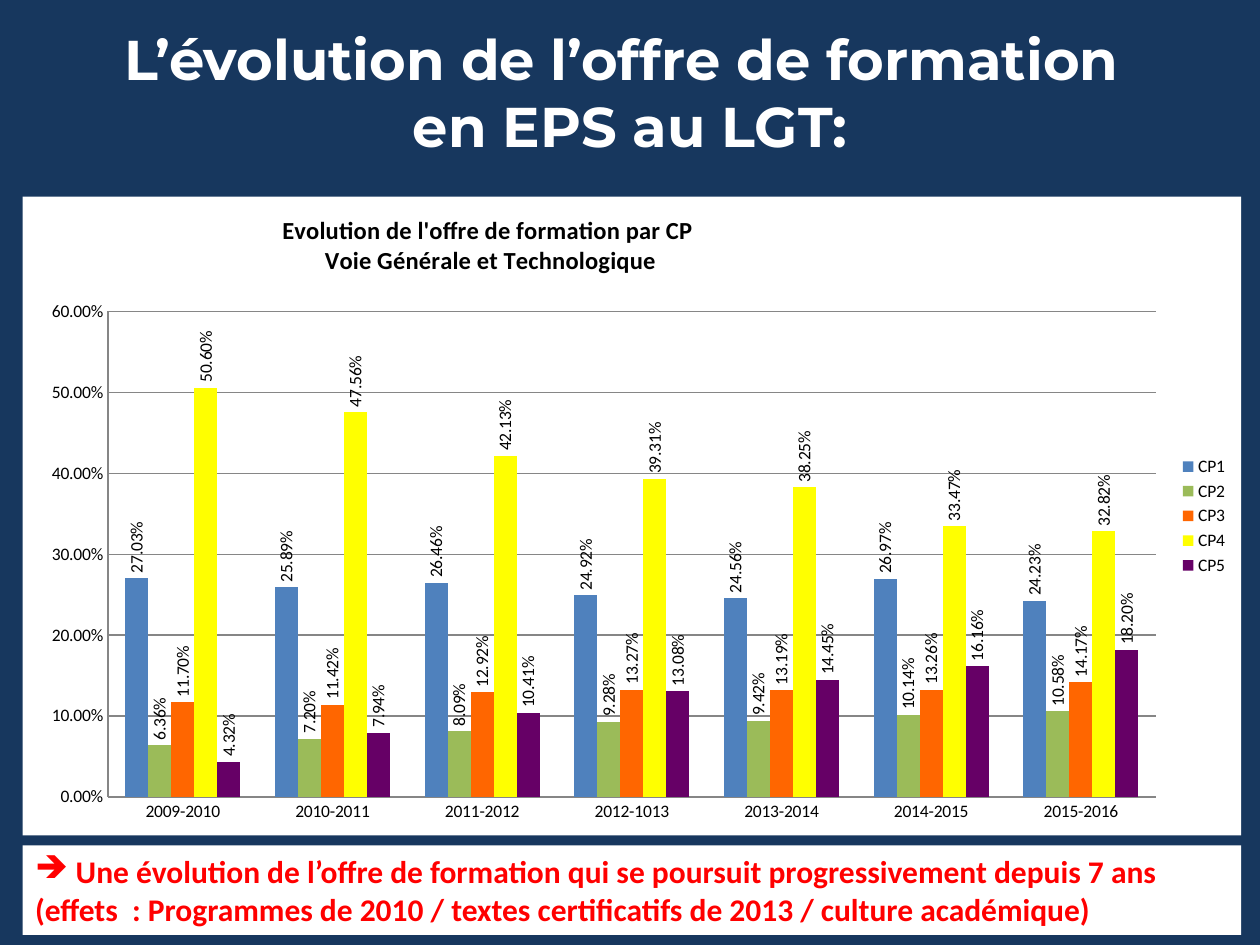
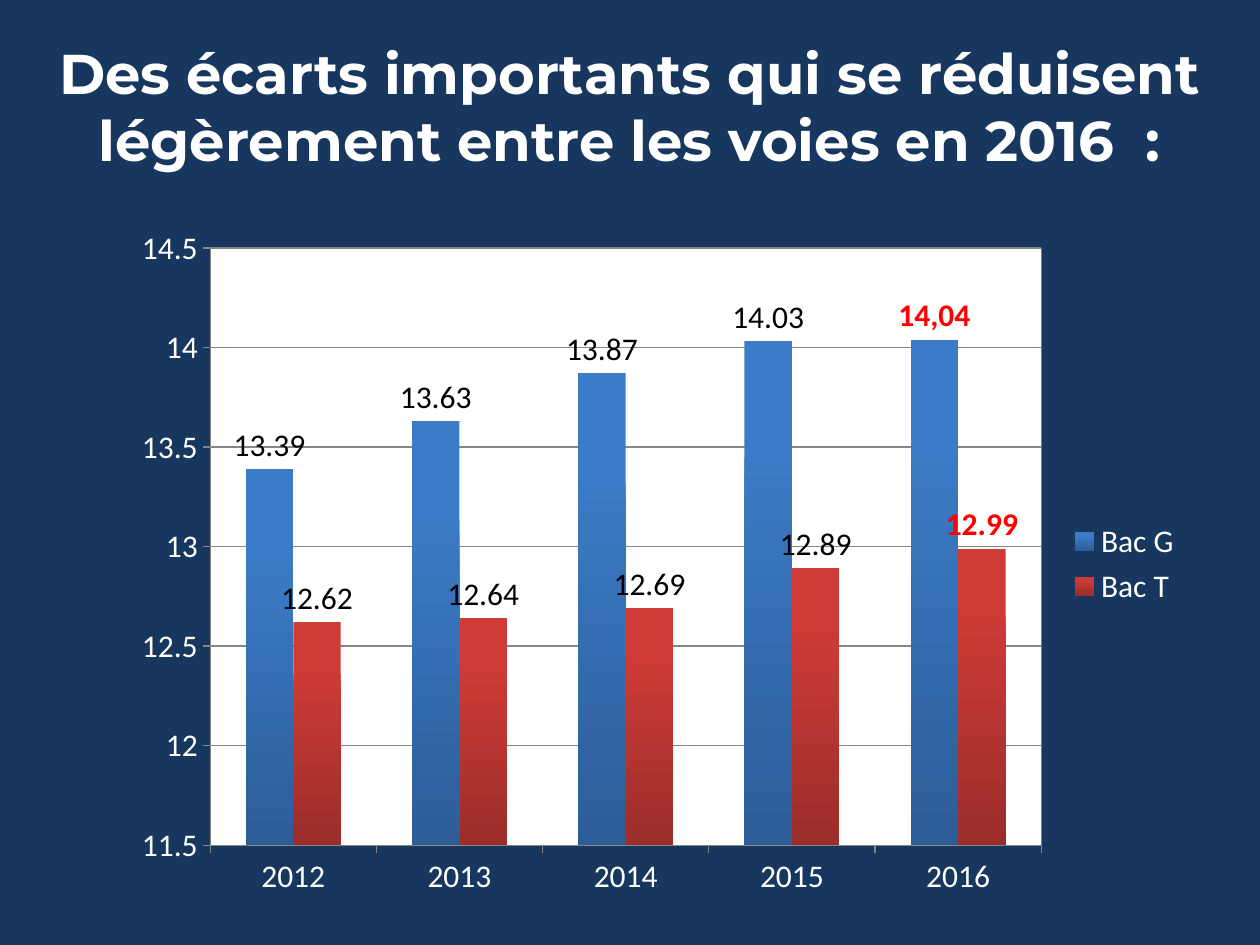
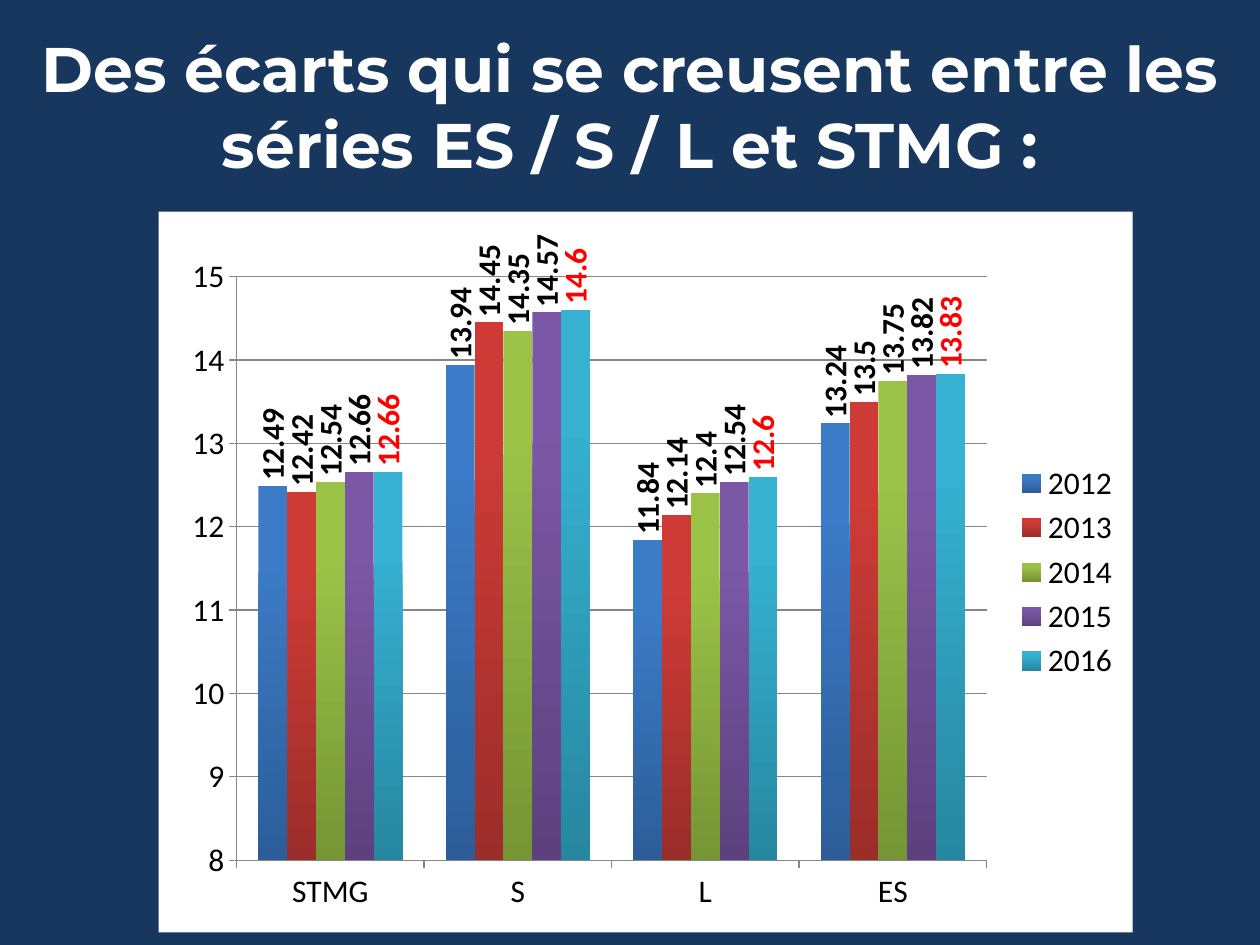
from dataclasses import dataclass
from lxml.etree import SubElement
from pptx import Presentation
from pptx.chart.data import CategoryChartData as Data
from pptx.dml.color import RGBColor as RGB
from pptx.enum.chart import XL_CHART_TYPE as Kind, XL_LABEL_POSITION as Spot
from pptx.enum.chart import XL_LEGEND_POSITION as Side, XL_TICK_MARK as Tick
from pptx.enum.shapes import MSO_SHAPE as Shape
from pptx.enum.text import MSO_ANCHOR as Anchor, PP_ALIGN as Align
from pptx.oxml import parse_xml
from pptx.oxml.ns import nsdecls, qn
from pptx.util import Inches, Pt

COLS, ROWS = 100, 75


@dataclass(frozen=True)
class Theme:
    navy: str = "17375E"
    white: str = "FFFFFF"
    black: str = "000000"
    red: str = "FF0000"
    grid: str = "868686"
    head: str = "Montserrat"
    body: str = "Calibri"
    title: int = 32
    big: int = 36
    text: int = 18
    sub: int = 14
    small: int = 10
    flat: tuple = ("4F81BD", "9BBB59", "FF6600", "FFFF00", "660066")
    fades: tuple = (("3C7BC7", "2C5D98"), ("CE3B37", "9B2D2A"), ("9BC348", "769535"),
                    ("7B58A6", "5D417E"), ("36B1D2", "2787A0"))


def style(font, size, color, bold=False, face=Theme.body):
    font.size, font.bold, font.name = Pt(size), bold, face
    font.color.rgb = RGB.from_string(color)


def write(frame, text, align=None, **look):
    """Fill a text frame: \\n starts a paragraph, \\v a new line."""
    for i, line in enumerate(text.split("\n")):
        para = frame.add_paragraph() if i else frame.paragraphs[0]
        para.text = line
        para.alignment = align
        for run in para.runs:
            style(run.font, **look)


def paint(fill, color):
    """Use one colour for a plain fill, or a pair for a fade from top to foot."""
    if isinstance(color, str):
        fill.solid()
        fill.fore_color.rgb = RGB.from_string(color)
        return
    fill.gradient()
    fill.gradient_angle = 270
    for stop, tone, pos in zip(fill.gradient_stops, color, (0.2, 1)):
        stop.color.rgb = RGB.from_string(tone)
        stop.position = pos


def place(node, index, x, y, size=None):
    """Set the share of the chart where a title or the inner plot stands."""
    for old in node.findall(qn("c:layout")):
        node.remove(old)
    box = parse_xml(f"<c:layout {nsdecls('c')}><c:manualLayout/></c:layout>")
    vals = {"xMode": "edge", "yMode": "edge", "x": x, "y": y}
    if size:
        vals = {"layoutTarget": "inner", **vals, "w": size[0], "h": size[1]}
    for key, val in vals.items():
        SubElement(box[0], qn("c:" + key)).set("val", str(val))
    node.insert(index, box)


def back(color):
    """Make the fill of a chart or plot area, without an outline."""
    fill = f'<a:solidFill><a:srgbClr val="{color}"/></a:solidFill>' if color else "<a:noFill/>"
    return parse_xml(f"<c:spPr {nsdecls('c', 'a')}>{fill}<a:ln><a:noFill/></a:ln></c:spPr>")


class Deck:
    def __init__(self):
        self.look = Theme()
        self.file = Presentation()
        self.file.slide_width, self.file.slide_height = Inches(10), Inches(7.5)
        self.slide = None

    def area(self, col, row, wide, high):
        dx, dy = self.file.slide_width / COLS, self.file.slide_height / ROWS
        return [round(v) for v in (col * dx, row * dy, wide * dx, high * dy)]

    def start(self, text, row=2.1, high=12.5, size=Theme.title):
        """Add a slide with its ground and its title."""
        self.slide = self.file.slides.add_slide(self.file.slide_layouts[6])
        paint(self.slide.background.fill, self.look.navy)
        frame = self.slide.shapes.add_textbox(*self.area(0, row, COLS, high)).text_frame
        frame.word_wrap, frame.vertical_anchor = True, Anchor.MIDDLE
        write(frame, text, Align.CENTER, size=size, color=self.look.white, bold=True,
              face=self.look.head)

    def note(self, text, mark, *cell):
        box = self.slide.shapes.add_shape(Shape.RECTANGLE, *self.area(*cell))
        box.shadow.inherit = False
        paint(box.fill, self.look.white)
        box.line.fill.background()
        frame = box.text_frame
        frame.word_wrap, frame.vertical_anchor = True, Anchor.MIDDLE
        props = frame.paragraphs[0]._p.get_or_add_pPr()
        SubElement(props, qn("a:buChar")).set("char", mark)
        write(frame, text, Align.LEFT, size=self.look.text, color=self.look.red, bold=True)

    def chart(self, cell, cats, rows, plot, tones, span, size=Theme.text, ink=Theme.black,
              ground=None, inner=None, tick=Tick.OUTSIDE, form="General"):
        """Draw columns; span is the low end, high end and step of the scale."""
        data = Data(number_format=form)
        data.categories = cats
        for name, vals in rows.items():
            data.add_series(name, vals)
        chart = self.slide.shapes.add_chart(Kind.COLUMN_CLUSTERED, *self.area(*cell), data).chart
        style(chart.font, size, self.look.black)
        chart.has_title = False
        root = chart._chartSpace
        root.find(qn("c:txPr")).addprevious(back(ground))
        room = root.chart.plotArea
        place(room, 0, *plot)
        if inner:
            room.append(back(inner))
        chart.has_legend = True
        chart.legend.position, chart.legend.include_in_layout = Side.RIGHT, False
        style(chart.legend.font, size, ink)
        scale = chart.value_axis
        scale.minimum_scale, scale.maximum_scale, scale.major_unit = span
        scale.has_major_gridlines = True
        for axis in (chart.category_axis, scale):
            axis.major_tick_mark, axis.minor_tick_mark = tick, Tick.NONE
            style(axis.tick_labels.font, size, ink)
            paint(axis.format.line.fill, self.look.grid)
        paint(scale.major_gridlines.format.line.fill, self.look.grid)
        scale.tick_labels.number_format = form
        scale.tick_labels.number_format_is_linked = False
        bars = chart.plots[0]
        bars.gap_width, bars.overlap, bars.vary_by_categories = 150, 0, False
        for row, tone in zip(bars.series, tones):
            row.invert_if_negative = False
            paint(row.format.fill, tone)
        return chart

    def label(self, row, form="General", turn=False, **look):
        """Show the values of a series, turned upright if asked."""
        tags = row.data_labels
        tags.show_value, tags.position = True, Spot.OUTSIDE_END
        tags.number_format, tags.number_format_is_linked = form, False
        style(tags.font, **look)
        if turn:
            body = tags._element.find(qn("c:txPr")).find(qn("a:bodyPr"))
            body.set("rot", "-5400000")
            body.set("vert", "horz")

    def flag(self, point, text=None):
        """Stress one label, with its own wording if given."""
        tag = point.data_label
        look = dict(size=self.look.text, color=self.look.red, bold=True)
        if text:
            write(tag.text_frame, text, **look)
        else:
            style(tag.font, **look)
        tag.position = Spot.OUTSIDE_END


def offer(deck):
    look = deck.look
    deck.start("L’évolution de l’offre de formation \ven EPS au LGT:", row=0, high=14.6)
    deck.note(" Une évolution de l’offre de formation qui se poursuit progressivement depuis 7 ans "
              "(effets  : Programmes de 2010 / textes certificatifs de 2013 / culture académique)",
              "➔", 1.8, 67.1, 96.7, 7.1)
    cats = ["2009-2010", "2010-2011", "2011-2012", "2012-1013", "2013-2014", "2014-2015",
            "2015-2016"]
    rows = {
        "CP1": (0.2703, 0.2589, 0.2646, 0.2492, 0.2456, 0.2697, 0.2423),
        "CP2": (0.0636, 0.072, 0.0809, 0.0928, 0.0942, 0.1014, 0.1058),
        "CP3": (0.117, 0.1142, 0.1292, 0.1327, 0.1319, 0.1326, 0.1417),
        "CP4": (0.506, 0.4756, 0.4213, 0.3931, 0.3825, 0.3347, 0.3282),
        "CP5": (0.0432, 0.0794, 0.1041, 0.1308, 0.1445, 0.1616, 0.182),
    }
    form = "0.00%"
    chart = deck.chart((1.8, 15.6, 96.7, 50.7), cats, rows, (0.07, 0.18, (0.86, 0.76)),
                       look.flat, (0, 0.6, 0.1), size=look.small, ground=look.white,
                       tick=Tick.NONE, form=form)
    write(chart.chart_title.text_frame,
          "Evolution de l'offre de formation par CP \nVoie Générale et Technologique",
          Align.CENTER, size=look.sub, color=look.black, bold=True)
    chart.chart_title.include_in_layout = False
    place(chart.chart_title._element, 1, 0.21, 0.02)
    for row in chart.plots[0].series:
        deck.label(row, form, turn=True, size=look.small, color=look.black)


def tracks(deck):
    look = deck.look
    deck.start("Des écarts importants qui se réduisent légèrement entre les voies en 2016  :")
    cats = [str(year) for year in range(2012, 2017)]
    rows = {"Bac G": (13.39, 13.63, 13.87, 14.03, 14.04),
            "Bac T": (12.62, 12.64, 12.69, 12.89, 12.99)}
    chart = deck.chart((8, 17.5, 86.8, 54.5), cats, rows, (0.1, 0.04, (0.76, 0.87)),
                       look.fades, (11.5, 14.5, 0.5), ink=look.white, inner=look.white)
    for row, text in zip(chart.plots[0].series, ("14,04", None)):
        deck.label(row, size=look.text, color=look.black)
        deck.flag(row.points[len(cats) - 1], text)


def streams(deck):
    look = deck.look
    deck.start("Des écarts qui se creusent entre les séries ES / S / L et STMG :", size=look.big)
    rows = {
        "2012": (12.49, 13.94, 11.84, 13.24),
        "2013": (12.42, 14.45, 12.14, 13.5),
        "2014": (12.54, 14.35, 12.4, 13.75),
        "2015": (12.66, 14.57, 12.54, 13.82),
        "2016": (12.66, 14.6, 12.6, 13.83),
    }
    chart = deck.chart((12.6, 16.8, 77.3, 57.2), ["STMG", "S", "L", "ES"], rows,
                       (0.08, 0.09, (0.77, 0.81)), look.fades, (8, 15, 1), ground=look.white)
    for row in chart.plots[0].series:
        color = look.red if row.name == "2016" else look.black
        deck.label(row, turn=True, size=look.text, color=color, bold=True)


def main():
    deck = Deck()
    for build in (offer, tracks, streams):
        build(deck)
    deck.file.save("out.pptx")


if __name__ == "__main__":
    main()
